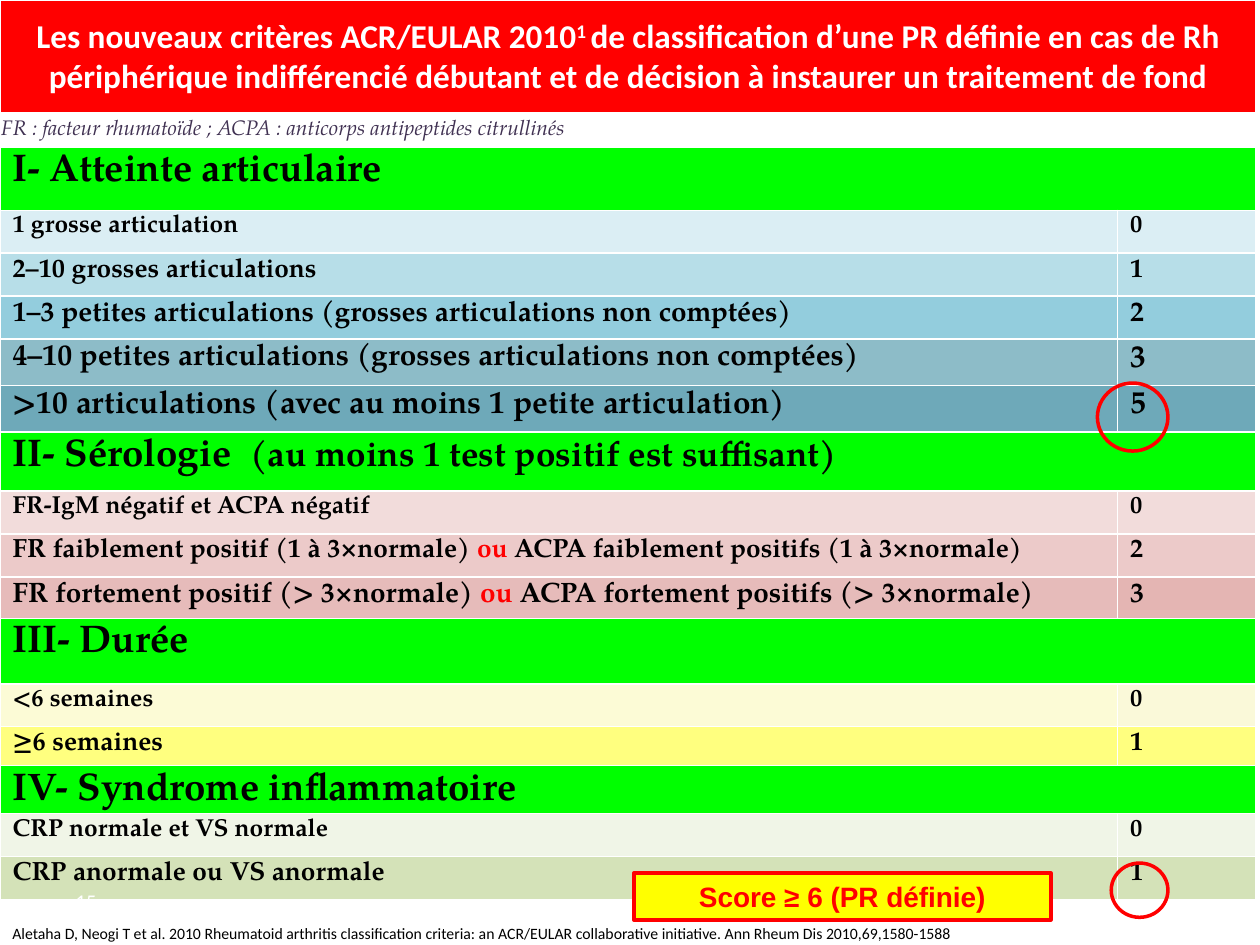
from dataclasses import dataclass
from typing import NamedTuple, Optional

from lxml import etree
from pptx import Presentation
from pptx import util as u
from pptx.dml.color import RGBColor
from pptx.enum import shapes, text
from pptx.oxml import ns

COLORS = {
    "white": "FFFFFF", "black": "000000", "red": "FF0000", "green": "00FF00",
    "yellow": "FFFF00", "note": "403152",
    "blue1": "DBEEF4", "blue2": "B7DEE8", "blue3": "93CDDD", "teal": "31859C",
    "rose1": "F2DCDB", "rose2": "E6B9B8", "rose3": "D99694",
    "lemon": "F7F47A", "straw": "F1EC84", "olive1": "EBF1DE", "olive2": "C3D69B",
}
SERIF, SANS = "TeX Gyre Pagella", "Calibri"


class Span(NamedTuple):
    words: str
    size: float
    color: str = "black"
    font: str = SERIF
    bold: bool = True
    italic: bool = False
    baseline: int = 0


class Fill(NamedTuple):
    color: str
    opacity: int = 100


@dataclass
class Heading:
    spans: list[Span]
    height: float
    fill: Fill = Fill("green")
    anchor: text.MSO_ANCHOR = text.MSO_ANCHOR.TOP
    align: text.PP_ALIGN = text.PP_ALIGN.LEFT
    margins: tuple[float, float] = (7.2, 0.72)
    spacing: float = 1.15
    bottom_border: float = 1


@dataclass
class Criterion:
    label: str  # "|" separates the alternatives around a red "ou"
    score: str
    size: float
    fill: Fill
    height: float = 24.5
    score_size: Optional[float] = None
    score_fill: Optional[Fill] = None


def title_span(words: str, baseline: int = 0) -> Span:
    return Span(words, 19, "white", SANS, baseline=baseline)


def section(words: str, height: float) -> Heading:
    return Heading([Span(words, 22)], height)


ROWS = [
    Heading([title_span("Les nouveaux critères ACR/EULAR 2010"),
             title_span("1 ", 30),
             title_span("de classification d’une PR définie en cas de Rh périphérique "
                        "indifférencié débutant et de décision à instaurer un "
                        "traitement de fond")],
            65.5, Fill("red"), text.MSO_ANCHOR.MIDDLE, text.PP_ALIGN.CENTER,
            (7.2, 3.6), 1, 3),
    Heading([Span("FR : facteur rhumatoïde ; ACPA : anticorps antipeptides citrullinés",
                  12, "note", bold=False, italic=True)],
            18.7, Fill("white"), text.MSO_ANCHOR.MIDDLE, margins=(0.72, 0.72), spacing=1),
    section("I- Atteinte articulaire", 36),
    Criterion("1 grosse articulation", "0", 14, Fill("blue1")),
    Criterion("2–10 grosses articulations", "1", 15, Fill("blue2")),
    Criterion("1–3 petites articulations (grosses articulations non comptées)",
              "2", 16, Fill("blue3")),
    Criterion("4–10 petites articulations (grosses articulations non comptées)",
              "3", 17, Fill("teal", 55), 26.6, score_size=18),
    Criterion(">10 articulations (avec au moins 1 petite articulation)",
              "5", 18, Fill("teal", 70), 26.6),
    Heading([Span("II- Sérologie  ", 22),
             Span("(au moins 1 test positif est suffisant)", 20)], 33.8),
    Criterion("FR-IgM négatif et ACPA négatif", "0", 14, Fill("rose1")),
    Criterion("FR faiblement positif (1 à 3×normale) | ACPA faiblement positifs (1 à 3×normale)",
              "2", 15, Fill("rose2", 75)),
    Criterion("FR fortement positif (> 3×normale) | ACPA fortement positifs (> 3×normale)",
              "3", 16, Fill("rose3", 64), 23.8, score_fill=Fill("rose3", 70)),
    section("III- Durée", 37.4),
    Criterion("<6 semaines", "0", 14, Fill("lemon", 30), score_fill=Fill("straw", 30)),
    Criterion("≥6 semaines", "1", 15, Fill("yellow", 50), 22.3),
    section("IV- Syndrome inflammatoire", 27.4),
    Criterion("CRP normale et VS normale", "0", 14, Fill("olive1", 70)),
    Criterion("CRP anormale ou VS anormale", "1", 15, Fill("olive2", 70)),
]


def rgb(color: str) -> RGBColor:
    return RGBColor.from_string(COLORS[color])


def write(paragraph, spans: list[Span]) -> None:
    for span in spans:
        run = paragraph.add_run()
        run.text = span.words
        run.font.size, run.font.name = u.Pt(span.size), span.font
        run.font.bold, run.font.italic = span.bold, span.italic
        run.font.color.rgb = rgb(span.color)
        if span.baseline:
            run.font._element.set("baseline", str(span.baseline * 1000))


def paint(cell, fill: Fill, top: float = 1, bottom: float = 1) -> None:
    cell.fill.solid()
    cell.fill.fore_color.rgb = rgb(fill.color)
    properties = cell._tc.get_or_add_tcPr()
    if fill.opacity < 100:
        shade = properties.find(".//" + ns.qn("a:srgbClr"))
        etree.SubElement(shade, ns.qn("a:alpha"), val=str(fill.opacity * 1000))
    # Borders come before the fill
    for place, (side, width) in enumerate(zip("LRTB", (1, 1, top, bottom))):
        border = etree.Element(ns.qn("a:ln" + side), w=str(u.Pt(width)))
        solid = etree.SubElement(border, ns.qn("a:solidFill"))
        etree.SubElement(solid, ns.qn("a:srgbClr"), val=COLORS["white"])
        properties.insert(place, border)


def fill_cell(cell, spans: list[Span], style: Heading) -> None:
    side, edge = style.margins
    cell.margin_left = cell.margin_right = u.Pt(side)
    cell.margin_top = cell.margin_bottom = u.Pt(edge)
    cell.vertical_anchor = style.anchor
    paragraph = cell.text_frame.paragraphs[0]
    paragraph.alignment, paragraph.line_spacing = style.align, style.spacing
    write(paragraph, spans)


def label_spans(row: Criterion) -> list[Span]:
    first, *others = row.label.split("|")
    spans = [Span(first, row.size)]
    for other in others:
        spans += [Span("ou", row.size, "red"), Span(other, row.size)]
    return spans


def draw_criteria(slide) -> None:
    table = slide.shapes.add_table(len(ROWS), 2, 0, 0, u.Pt(717.8),
                                   u.Pt(sum(row.height for row in ROWS))).table
    table.first_row = table.horz_banding = False
    table.columns[0].width, table.columns[1].width = u.Pt(638.6), u.Pt(79.2)
    plain = section("", 0)
    top = 1
    for index, row in enumerate(ROWS):
        table.rows[index].height = u.Pt(row.height)
        label, score = table.cell(index, 0), table.cell(index, 1)
        if isinstance(row, Heading):
            label.merge(score)
            fill_cell(label, row.spans, row)
            for cell in (label, score):
                paint(cell, row.fill, top, row.bottom_border)
            top = row.bottom_border
        else:
            fill_cell(label, label_spans(row), plain)
            fill_cell(score, [Span(row.score, row.score_size or row.size)], plain)
            paint(label, row.fill)
            paint(score, row.score_fill or row.fill)


def draw_caption(slide, box: tuple, span: Span, anchor=text.MSO_ANCHOR.TOP) -> None:
    frame = slide.shapes.add_textbox(*map(u.Pt, box)).text_frame
    frame.word_wrap, frame.vertical_anchor = True, anchor
    write(frame.paragraphs[0], [span])


def draw_outlined(slide, kind, box: tuple, width: float, fill: Optional[str] = None):
    outlined = slide.shapes.add_shape(kind, *map(u.Pt, box))
    outlined.shadow.inherit = False
    outlined.line.color.rgb, outlined.line.width = rgb("red"), u.Pt(width)
    if fill:
        outlined.fill.solid()
        outlined.fill.fore_color.rgb = rgb(fill)
    else:
        outlined.fill.background()
    return outlined


def main() -> None:
    deck = Presentation()
    deck.slide_width, deck.slide_height = u.Pt(720), u.Pt(540)
    slide = deck.slides.add_slide(deck.slide_layouts[6])
    draw_criteria(slide)

    # Verdict
    verdict = draw_outlined(slide, shapes.MSO_SHAPE.RECTANGLE,
                            (362.2, 499, 238.3, 26.6), 2.25, "yellow").text_frame
    verdict.word_wrap, verdict.vertical_anchor = True, text.MSO_ANCHOR.TOP
    verdict.paragraphs[0].alignment = text.PP_ALIGN.CENTER
    write(verdict.paragraphs[0], [Span("Score ≥ 6 (PR définie)", 16, "red", "Arial")])

    # Page number and reference
    draw_caption(slide, (36, 500.4, 167.8, 28.8),
                 Span("15", 12, "white", SANS, bold=False), text.MSO_ANCHOR.MIDDLE)
    draw_caption(slide, (0, 524.2, 720, 28.8),
                 Span("Aletaha D, Neogi T et al. 2010 Rheumatoid arthritis classification "
                      "criteria: an ACR/EULAR collaborative initiative. "
                      "Ann Rheum Dis 2010,69,1580-1588", 9, font=SANS, bold=False))

    # Circled scores
    for circle in ((627.1, 218.9, 40.3, 38.9), (635, 493.2, 32.4, 31)):
        draw_outlined(slide, shapes.MSO_SHAPE.OVAL, circle, 2)
    deck.save("out.pptx")


if __name__ == "__main__":
    main()
